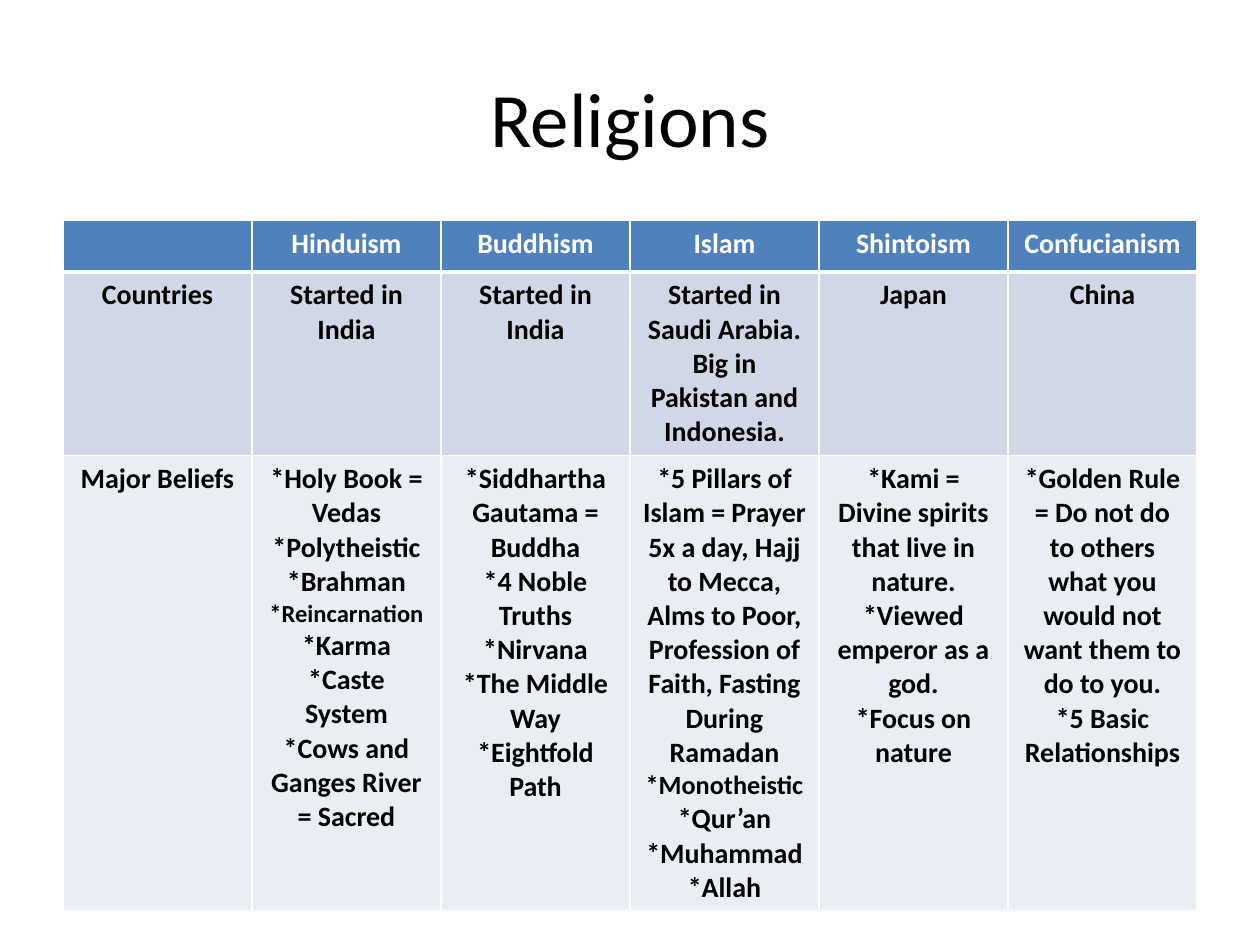
"""Build a slide that compares five religions in a table."""
from lxml import etree
from pptx import Presentation
from pptx import util as u
from pptx.dml.color import RGBColor
from pptx.enum import text
from pptx.oxml import ns

HEADS = ["", "Hinduism", "Buddhism", "Islam", "Shintoism", "Confucianism"]
LANDS = [
    "Countries", "Started in India", "Started in India",
    "Started in Saudi Arabia. Big in Pakistan and Indonesia.",
    "Japan", "China",
]
BELIEFS = [
    "Major Beliefs",
    "*Holy Book = Vedas\n*Polytheistic\n*Brahman\n*Reincarnation\n*Karma\n"
    "*Caste System\n*Cows and Ganges River = Sacred",
    "*Siddhartha Gautama = Buddha\n*4 Noble Truths\n*Nirvana\n"
    "*The Middle Way\n*Eightfold Path",
    "*5 Pillars of Islam = Prayer 5x a day, Hajj to Mecca, Alms to Poor, "
    "Profession of Faith, Fasting During Ramadan\n*Monotheistic\n*Qur’an\n"
    "*Muhammad\n*Allah",
    "*Kami = Divine spirits that live in nature.\n"
    "*Viewed emperor as a god.\n*Focus on nature",
    "*Golden Rule = Do not do to others what you would not want them to do "
    "to you.\n*5 Basic Relationships",
]
SMALL = {"*Reincarnation": 14, "*Monotheistic": 15}


def color(code):
    return RGBColor.from_string(code)


def write(frame, words, size=16, ink="000000", bold=False, font="Calibri"):
    for i, line in enumerate(words.split("\n")):
        para = frame.add_paragraph() if i else frame.paragraphs[0]
        para.alignment = text.PP_ALIGN.CENTER
        if line:
            run = para.add_run()
            run.text = line
            run.font.size = u.Pt(SMALL.get(line, size))
            run.font.name = font
            run.font.bold = bold
            run.font.color.rgb = color(ink)


class Deck:
    fills = ["4F81BD", "D0D8E8", "E9EDF4"]
    inks = ["FFFFFF", "000000", "000000"]
    rule = "FFFFFF"

    def __init__(self):
        self.prs = Presentation()
        self.prs.slide_width, self.prs.slide_height = u.Cm(25.4), u.Cm(19.05)
        self.slide = self.prs.slides.add_slide(self.prs.slide_layouts[5])

    def title(self, words, left, top, width, height):
        shape = self.slide.shapes.title
        shape.left, shape.top = u.Cm(left), u.Cm(top)
        shape.width, shape.height = u.Cm(width), u.Cm(height)
        shape.text_frame.vertical_anchor = text.MSO_ANCHOR.MIDDLE
        write(shape.text_frame, words, size=44)

    def edge(self, cell, side, points):
        line = etree.SubElement(cell._tc.get_or_add_tcPr(),
                                ns.qn("a:ln" + side), w=str(u.Pt(points)))
        fill = etree.SubElement(line, ns.qn("a:solidFill"))
        etree.SubElement(fill, ns.qn("a:srgbClr"), val=self.rule)

    def table(self, rows, left, top, width, row):
        count = len(rows[0])
        grid = self.slide.shapes.add_table(
            len(rows), count, u.Cm(left), u.Cm(top), u.Cm(width),
            u.Cm(row * len(rows))).table
        for col in grid.columns:
            col.width = u.Cm(width / count)
        for r, words in enumerate(rows):
            for c, word in enumerate(words):
                cell = grid.cell(r, c)
                for side in "LRTB":
                    thick = (r, side) in [(0, "B"), (1, "T")]
                    self.edge(cell, side, 3 if thick else 1)
                cell.fill.solid()
                cell.fill.fore_color.rgb = color(self.fills[r])
                write(cell.text_frame, word, ink=self.inks[r], bold=True)


def main():
    deck = Deck()
    deck.title("Religions", 1.27, 0.76, 22.86, 3.18)
    deck.table([HEADS, LANDS, BELIEFS], 1.27, 4.45, 22.86, 1.03)
    deck.prs.save("out.pptx")


if __name__ == "__main__":
    main()
